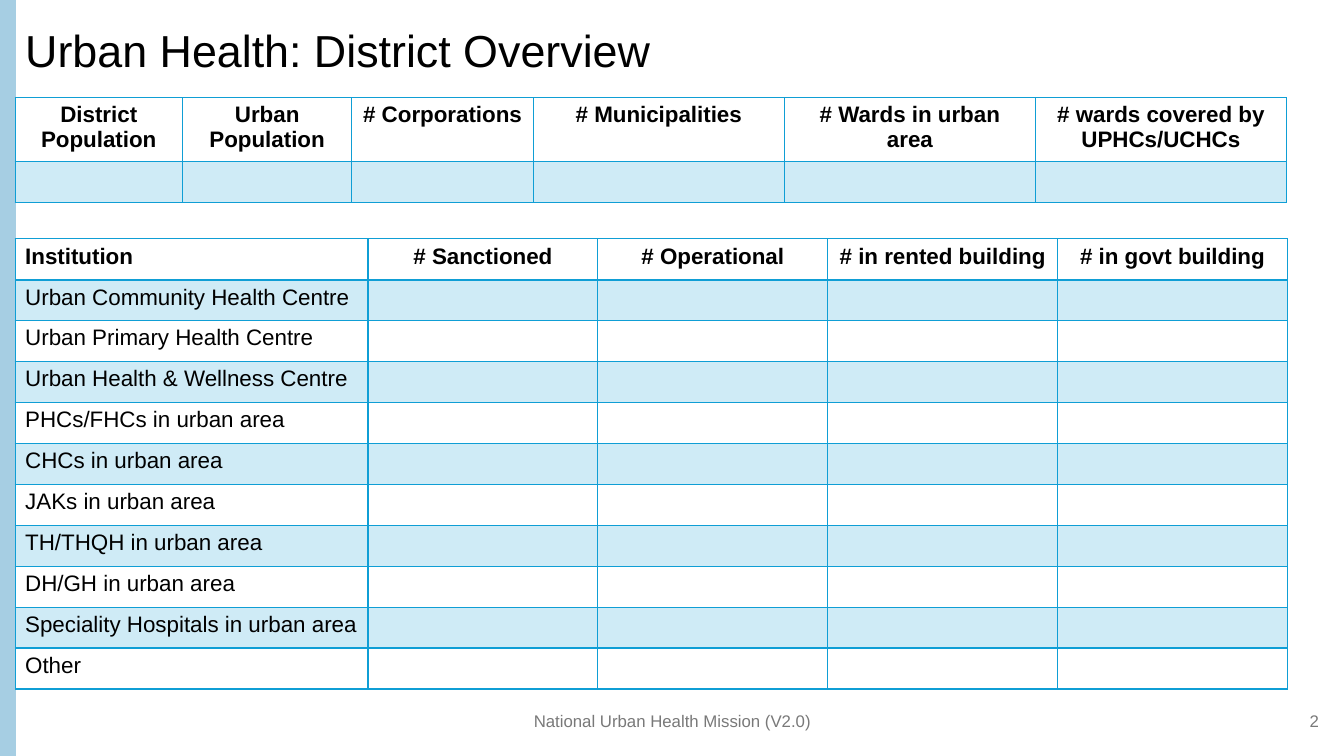
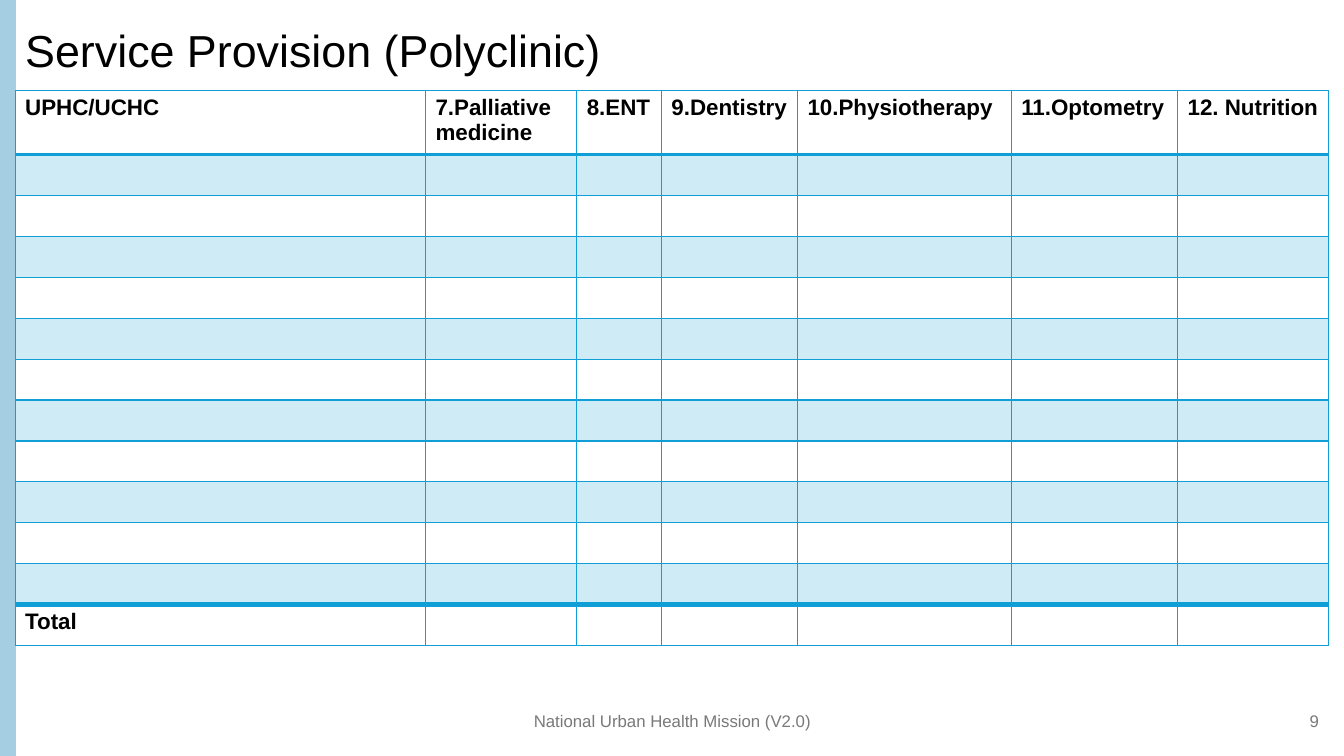
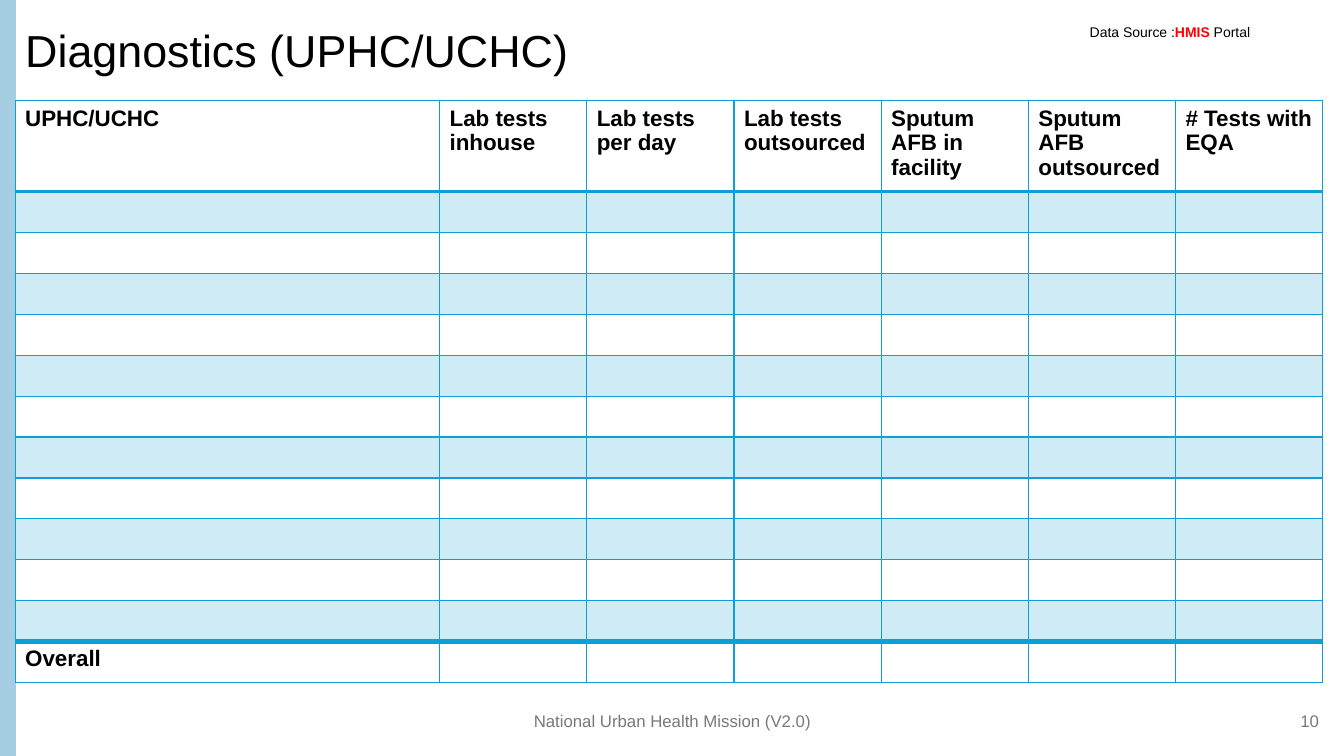
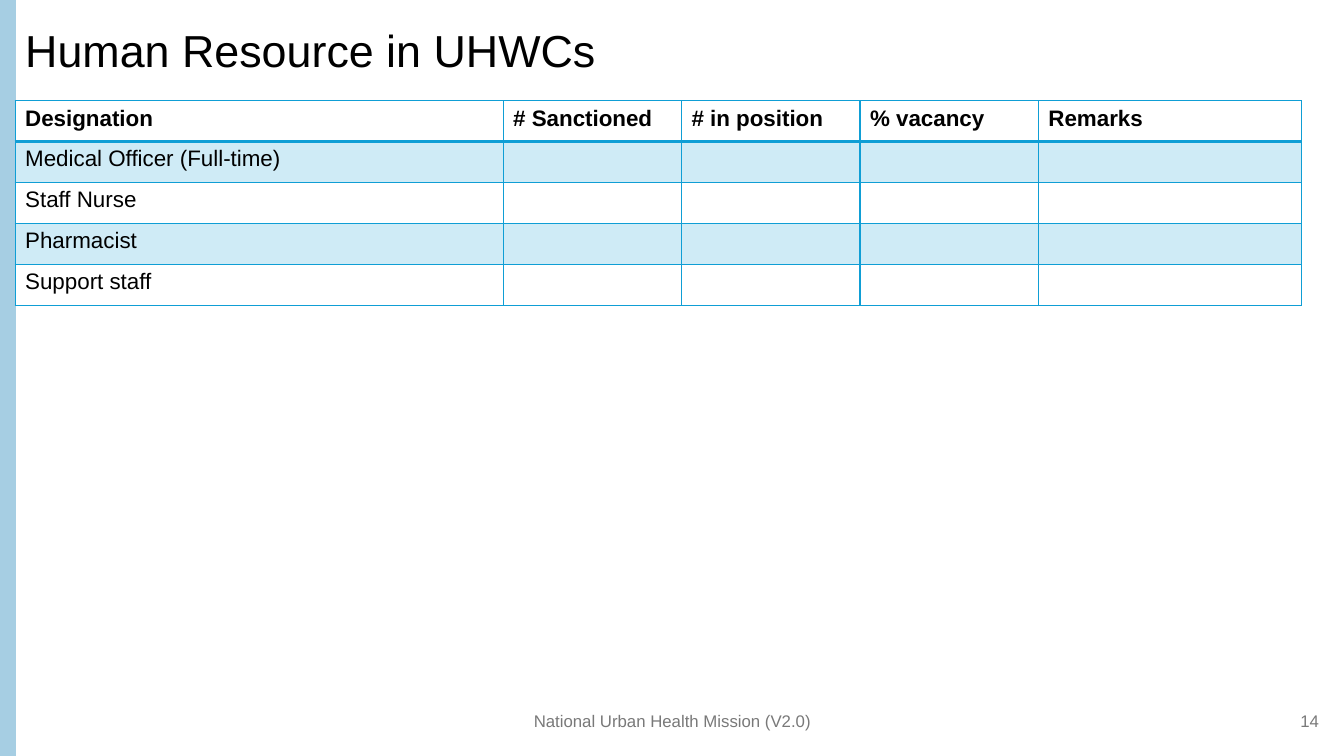
from dataclasses import dataclass

from lxml.etree import SubElement
from pptx import Presentation
from pptx.dml.color import RGBColor
from pptx.enum.shapes import MSO_SHAPE as Shape
from pptx.enum.text import MSO_ANCHOR as Anchor, PP_ALIGN as Align
from pptx.oxml import parse_xml
from pptx.oxml.ns import nsdecls, qn
from pptx.util import Pt

EMU_PER_PX = 9144  # 100 px to the inch


def px(*lengths):
    return [length * EMU_PER_PX for length in lengths]


@dataclass(frozen=True)
class Theme:
    font: str = "Arial"
    text: str = "000000"
    muted: str = "797979"
    alert: str = "FF0000"
    band: str = "A6CEE3"
    accent: str = "0F9ED5"
    tint_percent: int = 20
    title_size: int = 32
    table_size: int = 16
    footer_size: int = 12
    note_size: int = 10
    thin: int = 1
    header_rule: int = 2
    total_rule: int = 4
    left: int = 15
    ten_rows: int = 406  # height of ten table rows


class Deck:
    def __init__(self, theme, width, height, footer):
        self.theme = theme
        self.footer = footer
        self.width, self.height = width, height
        self.presentation = Presentation()
        self.presentation.slide_width, self.presentation.slide_height = px(width, height)
        self.slide = None

    # Text
    def add_text(self, paragraph, runs, size, color=None, bold=False, **formats):
        """Fill a paragraph with (text, run overrides) pairs or one string."""
        for name, value in formats.items():
            setattr(paragraph, name, value)
        for text, changes in [(runs, {})] if isinstance(runs, str) else runs:
            run = paragraph.add_run()
            run.text = text
            style = {"color": color or self.theme.text, "bold": bold, **changes}
            run.font.color.rgb = RGBColor.from_string(style.pop("color"))
            style |= {"name": self.theme.font, "size": Pt(size)}
            for name, value in style.items():
                setattr(run.font, name, value)

    def text_box(self, box, runs, size, anchor=Anchor.MIDDLE, **formats):
        frame = self.slide.shapes.add_textbox(*px(*box)).text_frame
        frame.word_wrap = True
        frame.vertical_anchor = anchor
        self.add_text(frame.paragraphs[0], runs, size, **formats)

    # Slide frame: side band, title, footer and number
    def add_slide(self, title, number):
        theme = self.theme
        self.slide = self.presentation.slides.add_slide(self.presentation.slide_layouts[5])
        band = self.slide.shapes.add_shape(Shape.RECTANGLE, *px(0, 0, theme.left, self.height))
        band.shadow.inherit = False
        band.fill.solid()
        band.fill.fore_color.rgb = band.line.color.rgb = RGBColor.from_string(theme.band)
        band.line.width = Pt(1.5)

        heading = self.slide.shapes.title
        heading.left, heading.top, heading.width, heading.height = px(theme.left, 15, 1305, 75)
        heading.text_frame.vertical_anchor = Anchor.MIDDLE
        self.add_text(heading.text_frame.paragraphs[0], title, theme.title_size,
                      alignment=Align.LEFT, line_spacing=0.9)

        for box, text, alignment in (((442, 695, 450, 40), self.footer, Align.CENTER),
                                     ((1018, 695, 300, 40), str(number), Align.RIGHT)):
            self.text_box(box, text, theme.footer_size, color=theme.muted, alignment=alignment)

    # Tables
    def style_cell(self, cell, tinted, top, bottom):
        theme = self.theme
        if tinted:
            cell.fill.solid()
            cell.fill.fore_color.rgb = RGBColor.from_string(theme.accent)
        else:
            cell.fill.background()
        properties = cell._tc.get_or_add_tcPr()
        for color in properties.iter(qn("a:srgbClr")):
            SubElement(color, qn("a:alpha"), val=str(theme.tint_percent * 1000))
        edges = {"lnL": theme.thin, "lnR": theme.thin, "lnT": top, "lnB": bottom}
        for position, (edge, points) in enumerate(edges.items()):
            properties.insert(position, parse_xml(
                f'<a:{edge} {nsdecls("a")} w="{Pt(points)}"><a:solidFill>'
                f'<a:srgbClr val="{theme.accent}"/></a:solidFill></a:{edge}>'))

    def table(self, top, columns, header, labels, header_height=None, header_rule=None,
              first_align=Align.LEFT, other_align=Align.LEFT, total=False):
        """Draw a header row, then one row per label with empty cells beside it."""
        theme = self.theme
        row_height = px(theme.ten_rows)[0] // 10
        first_height = px(header_height)[0] if header_height else row_height
        count = len(labels) + 1
        table = self.slide.shapes.add_table(
            count, len(columns), *px(theme.left, top, sum(columns)),
            first_height + row_height * len(labels)).table
        table.first_row = table.horz_banding = False
        for column, width in zip(table.columns, px(*columns)):
            column.width = width

        # Horizontal rules, from above the header to below the last row
        rules = [theme.thin] * (count + 1)
        rules[1] = header_rule or theme.header_rule
        if total:
            rules[-2] = theme.total_rule

        for index, row in enumerate(table.rows):
            row.height = row_height if index else first_height
            is_total = total and index == count - 1
            texts = [labels[index - 1]] if index else header
            for place, cell in enumerate(row.cells):
                self.style_cell(cell, index % 2 == 1 and not is_total,
                                rules[index], rules[index + 1])
                paragraph = cell.text_frame.paragraphs[0]
                if place < len(texts) and texts[place]:
                    self.add_text(paragraph, texts[place], theme.table_size,
                                  bold=index == 0 or is_total,
                                  alignment=other_align if place else first_align)
                else:
                    paragraph.font.size = Pt(theme.table_size)


def main():
    theme = Theme()
    deck = Deck(theme, 1333, 750, "National Urban Health Mission (V2.0)")
    blank_rows = [""] * 11

    # District overview
    deck.add_slide("Urban Health: District Overview", 2)
    deck.table(97, [166, 168, 180] + [249] * 3,
               ["District Population", "Urban Population", "# Corporations",
                "# Municipalities", "# Wards in urban area",
                "# wards covered by UPHCs/UCHCs"],
               [""], header_height=60, header_rule=theme.thin,
               first_align=Align.CENTER, other_align=Align.CENTER)
    deck.table(237, [350] + [228] * 4,
               ["Institution", "# Sanctioned", "# Operational",
                "# in rented building", "# in govt building"],
               ["Urban Community Health Centre", "Urban Primary Health Centre",
                "Urban Health & Wellness Centre", "PHCs/FHCs in urban area",
                "CHCs in urban area", "JAKs in urban area", "TH/THQH in urban area",
                "DH/GH in urban area", "Speciality Hospitals in urban area", "Other"],
               other_align=Align.CENTER)

    # Polyclinic services
    deck.add_slide("Service Provision (Polyclinic)", 9)
    deck.table(90, [407, 150, 84, 135, 212, 165, 150],
               ["UPHC/UCHC", "7.Palliative medicine", "8.ENT", "9.Dentistry",
                "10.Physiotherapy", "11.Optometry", "12. Nutrition"],
               blank_rows + ["Total"], header_height=59, total=True)

    # Diagnostics
    deck.add_slide("Diagnostics (UPHC/UCHC)", 10)
    deck.table(100, [421] + [146] * 6,
               ["UPHC/UCHC", "Lab tests inhouse", "Lab tests per day",
                "Lab tests outsourced", "Sputum AFB in facility",
                "Sputum AFB outsourced", "# Tests with EQA"],
               blank_rows + ["Overall"], header_height=84, total=True)
    deck.text_box((1071, 18, 194, 27),
                  [("Data Source :", {}), ("HMIS ", {"color": theme.alert, "bold": True}),
                   ("Portal", {})],
                  theme.note_size, anchor=Anchor.TOP)

    # Staffing
    deck.add_slide("Human Resource in UHWCs", 14)
    deck.table(100, [484] + [177] * 3 + [261],
               ["Designation", "# Sanctioned", "# in position", "% vacancy", "Remarks"],
               ["Medical Officer (Full-time)", "Staff Nurse", "Pharmacist", "Support staff"])

    deck.presentation.save("out.pptx")


if __name__ == "__main__":
    main()
